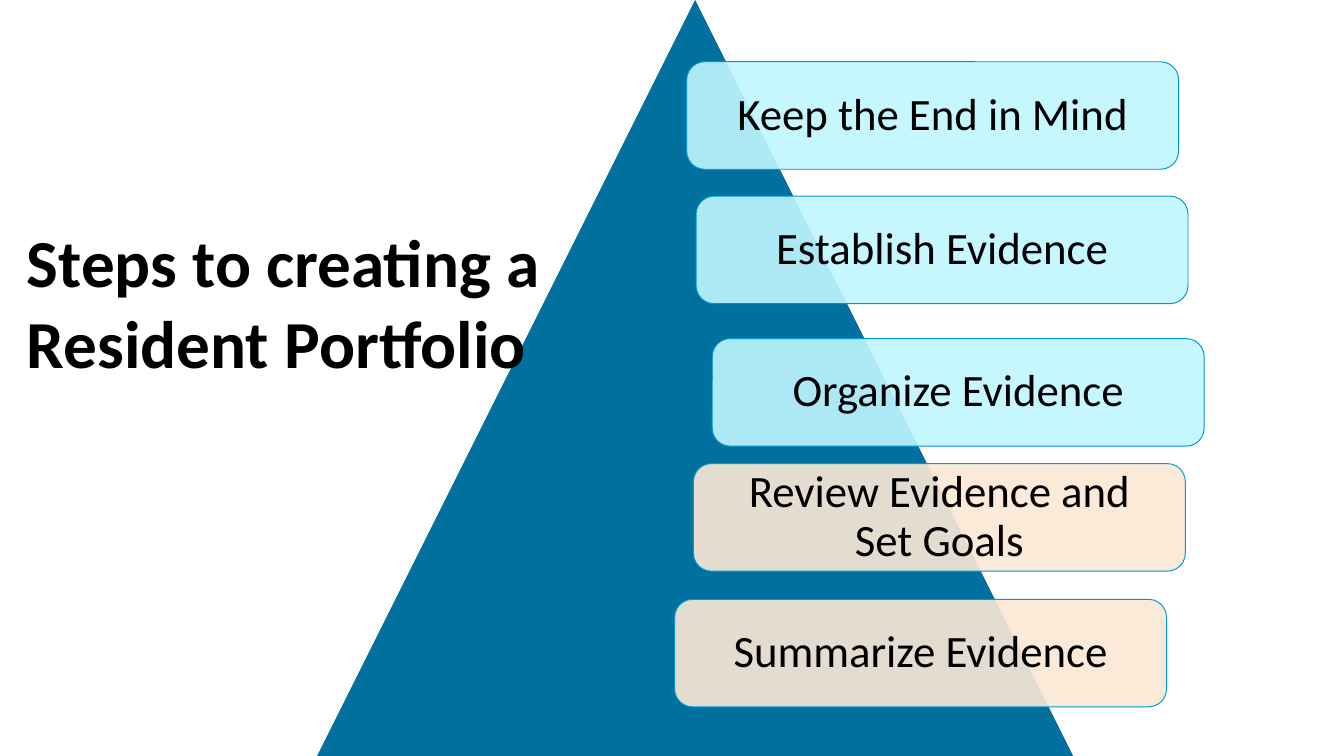
from dataclasses import dataclass

from lxml import etree
from pptx import Presentation
from pptx import util as u
from pptx.dml.color import RGBColor
from pptx.enum import shapes, text
from pptx.oxml.ns import qn


@dataclass(frozen=True)
class Theme:
    font: str = "Calibri"
    ink: str = "000000"
    pyramid: str = "00709E"
    outline: str = "0096D3"
    aqua: str = "C0F7FF"
    peach: str = "FCE8D5"
    title_size: int = 36
    step_size: int = 24


def write(tf, words, *, font, size, color, bold=False, align=None, spacing=None):
    p = tf.paragraphs[0]
    p.alignment, p.line_spacing = align, spacing
    r = p.add_run()
    r.text = words
    r.font.name, r.font.size, r.font.bold = font, u.Pt(size), bold
    r.font.color.rgb = RGBColor.from_string(color)


class Deck:
    """Places elements on a grid of 100 columns; rows are as tall as columns are wide."""

    def __init__(self, theme, width=10, height=5.625, columns=100):
        self.theme = theme
        self.prs = Presentation()
        self.prs.slide_width = u.Inches(width)
        self.prs.slide_height = u.Inches(height)
        self.cell = self.prs.slide_width / columns
        self.rows = self.prs.slide_height / self.cell
        self.s = self.prs.slides.add_slide(self.prs.slide_layouts[5])

    def at(self, *cells):
        return [round(c * self.cell) for c in cells]

    def shape(self, kind, box, fill, line=None, opacity=100):
        sp = self.s.shapes.add_shape(kind, *self.at(*box))
        sp.shadow.inherit = False
        sp.fill.solid()
        sp.fill.fore_color.rgb = RGBColor.from_string(fill)
        if opacity < 100:
            color = sp.element.spPr.find(".//" + qn("a:srgbClr"))
            etree.SubElement(color, qn("a:alpha"), val=str(opacity * 1000))
        if line:
            sp.line.color.rgb = RGBColor.from_string(line)
            sp.line.width = u.Pt(0.5)
        else:
            sp.line.fill.background()
        return sp

    def pyramid(self, left):
        side = self.rows
        self.shape(shapes.MSO_SHAPE.ISOSCELES_TRIANGLE, (left, 0, side, side),
                   self.theme.pyramid)

    def step(self, words, left, top, fill):
        t = self.theme
        sp = self.shape(shapes.MSO_SHAPE.ROUNDED_RECTANGLE, (left, top, 36.6, 8),
                        fill, t.outline, opacity=90)
        tf = sp.text_frame
        tf.word_wrap = True
        tf.vertical_anchor = text.MSO_ANCHOR.MIDDLE
        tf.margin_left = tf.margin_right = u.Inches(0.14)
        tf.margin_top = tf.margin_bottom = u.Inches(0.1)
        write(tf, words, font=t.font, size=t.step_size, color=t.ink,
              align=text.PP_ALIGN.CENTER, spacing=0.9)

    def title(self, words, box):
        t = self.theme
        sp = self.s.shapes.title
        sp.left, sp.top, sp.width, sp.height = self.at(*box)
        tf = sp.text_frame
        tf.word_wrap = True
        tf.auto_size = text.MSO_AUTO_SIZE.NONE
        tf.vertical_anchor = text.MSO_ANCHOR.TOP
        write(tf, words, font=t.font, size=t.title_size, color=t.ink, bold=True,
              align=text.PP_ALIGN.LEFT)
        # The title overlaps the pyramid, so bring it to the front
        sp.element.getparent().append(sp.element)


def main():
    theme = Theme()
    deck = Deck(theme)

    # Pyramid behind the steps
    deck.pyramid(left=23.6)

    # Steps: wording, left column, top row, fill
    for step in (
        ("Keep the End in Mind", 51.1, 4.6, theme.aqua),
        ("Establish Evidence", 51.8, 14.6, theme.aqua),
        ("Organize Evidence", 53, 25.2, theme.aqua),
        ("Review Evidence and Set Goals", 51.6, 34.5, theme.peach),
        ("Summarize Evidence", 50.2, 44.6, theme.peach),
    ):
        deck.step(*step)

    # Title
    deck.title("Steps to creating a Resident Portfolio", (1, 15.9, 41.8, 13.1))

    deck.prs.save("out.pptx")


if __name__ == "__main__":
    main()
